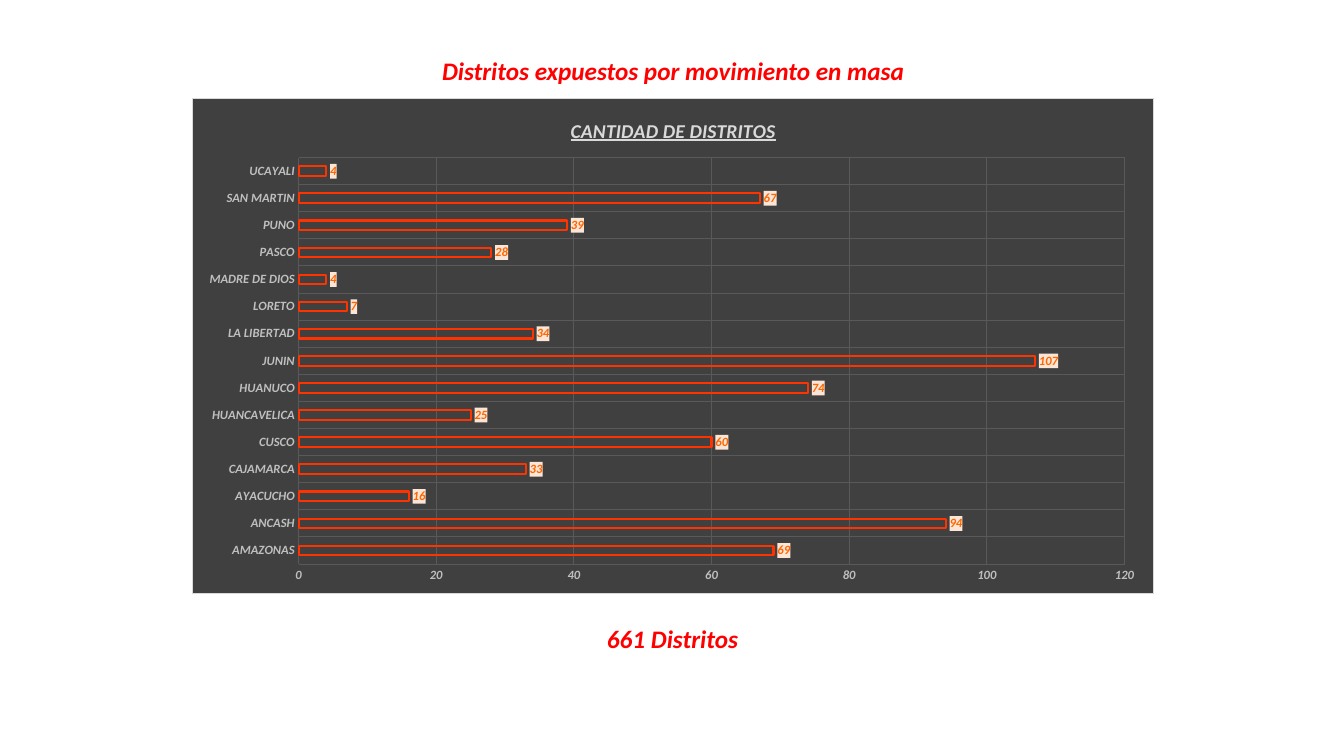
from typing import NamedTuple

from lxml import etree
from pptx import Presentation
from pptx import util as u
from pptx.chart.data import CategoryChartData
from pptx.dml.color import RGBColor
from pptx.enum import chart as ch
from pptx.enum import text as t
from pptx.oxml import parse_xml
from pptx.oxml.ns import nsdecls, qn

FONT = "Calibri"
RED, ORANGE, BAR_RED = "FF0000", "FF6600", "FF3300"
DARK, GRID, SILVER, PALE = "404040", "595959", "BFBFBF", "D9D9D9"
LABEL_FILL = "FBE5D6"


class Caption(NamedTuple):
    text: str
    left: float
    top: float
    width: float
    wrap: bool


CAPTIONS = [
    Caption("Distritos expuestos por movimiento en masa", 10.82, 1.27, 12.29, False),
    Caption("661 Distritos", 14.83, 15.57, 4.24, True),
]

DISTRICTS = {
    "AMAZONAS": 69, "ANCASH": 94, "AYACUCHO": 16, "CAJAMARCA": 33,
    "CUSCO": 60, "HUANCAVELICA": 25, "HUANUCO": 74, "JUNIN": 107,
    "LA LIBERTAD": 34, "LORETO": 7, "MADRE DE DIOS": 4, "PASCO": 28,
    "PUNO": 39, "SAN MARTIN": 67, "UCAYALI": 4,
}


def rgb(value: str) -> RGBColor:
    return RGBColor.from_string(value)


def style_font(font, size: float, color: str, underline: bool = False) -> None:
    font.name, font.size = FONT, u.Pt(size)
    font.bold = font.italic = True
    font.color.rgb = rgb(color)
    if underline:
        font.underline = True


def write(frame, content: str, **font_format) -> None:
    paragraph = frame.paragraphs[0]
    paragraph.alignment = t.PP_ALIGN.CENTER
    run = paragraph.add_run()
    run.text = content
    style_font(run.font, **font_format)


def add_caption(slide, caption: Caption) -> None:
    box = slide.shapes.add_textbox(u.Cm(caption.left), u.Cm(caption.top),
                                   u.Cm(caption.width), u.Cm(1.02))
    box.text_frame.word_wrap = caption.wrap
    box.text_frame.auto_size = t.MSO_AUTO_SIZE.SHAPE_TO_FIT_TEXT
    write(box.text_frame, caption.text, size=18, color=RED)


def area_format(fill: str, line: str = "") -> etree._Element:
    """Fill and optional hairline for chart parts that python-pptx cannot format."""
    solid = '<a:solidFill><a:srgbClr val="{}"/></a:solidFill>'
    border = f'<a:ln w="9525">{solid.format(line)}</a:ln>' if line else ""
    return parse_xml(f'<c:spPr {nsdecls("c", "a")}>{solid.format(fill)}{border}</c:spPr>')


def place_plot(chart, **fractions: float) -> None:
    """Fix the inner plot area as fractions of the chart."""
    plot_area = chart._chartSpace.chart.plotArea
    for layout in plot_area.findall(qn("c:layout")):
        plot_area.remove(layout)
    parts = "".join(f'<c:{key} val="{value}"/>' for key, value in fractions.items())
    plot_area.insert(0, parse_xml(
        f'<c:layout {nsdecls("c")}><c:manualLayout><c:layoutTarget val="inner"/>'
        f'<c:xMode val="edge"/><c:yMode val="edge"/>{parts}'
        '</c:manualLayout></c:layout>'))


def style_axis(axis) -> None:
    axis.major_tick_mark = axis.minor_tick_mark = ch.XL_TICK_MARK.NONE
    axis.format.line.fill.background()
    axis.has_major_gridlines = True
    grid = axis.major_gridlines.format.line
    grid.width, grid.color.rgb = u.Pt(0.75), rgb(GRID)
    style_font(axis.tick_labels.font, 9, SILVER)


def style_bars(plot) -> None:
    plot.gap_width, plot.overlap, plot.vary_by_categories = 182, -50, False
    bars = plot.series[0]
    bars.format.fill.background()
    bars.format.line.width = u.Pt(1.5)
    bars.format.line.color.rgb = rgb(BAR_RED)
    labels = bars.data_labels
    labels.show_value = True
    labels.position = ch.XL_LABEL_POSITION.OUTSIDE_END
    labels.number_format, labels.number_format_is_linked = "#,##0", False
    style_font(labels.font, 9, ORANGE)
    labels._element.find(qn("c:txPr")).addprevious(area_format(LABEL_FILL))


def add_district_chart(slide) -> None:
    counts = CategoryChartData(number_format="#,##0")
    counts.categories = list(DISTRICTS)
    counts.add_series("Series 1", list(DISTRICTS.values()))
    chart = slide.shapes.add_chart(ch.XL_CHART_TYPE.BAR_CLUSTERED, u.Cm(4.85), u.Cm(2.46),
                                   u.Cm(24.23), u.Cm(12.52), counts).chart
    chart.font.name, chart.font.size = FONT, u.Pt(10)
    chart.has_legend = False
    chart.has_title = True
    write(chart.chart_title.text_frame, "CANTIDAD DE DISTRITOS",
          size=14, color=PALE, underline=True)
    chart.chart_title.include_in_layout = False
    chart._chartSpace.chart.addnext(area_format(DARK, PALE))
    place_plot(chart, x=0.11, y=0.12, w=0.86, h=0.82)
    for axis in (chart.category_axis, chart.value_axis):
        style_axis(axis)
    chart.value_axis.minimum_scale, chart.value_axis.maximum_scale = 0, 120
    chart.value_axis.major_unit = 20
    style_bars(chart.plots[0])


def main() -> None:
    deck = Presentation()
    deck.slide_width, deck.slide_height = u.Cm(33.87), u.Cm(19.05)
    slide = deck.slides.add_slide(deck.slide_layouts[6])
    for caption in CAPTIONS:
        add_caption(slide, caption)
    add_district_chart(slide)
    deck.save("out.pptx")


if __name__ == "__main__":
    main()
